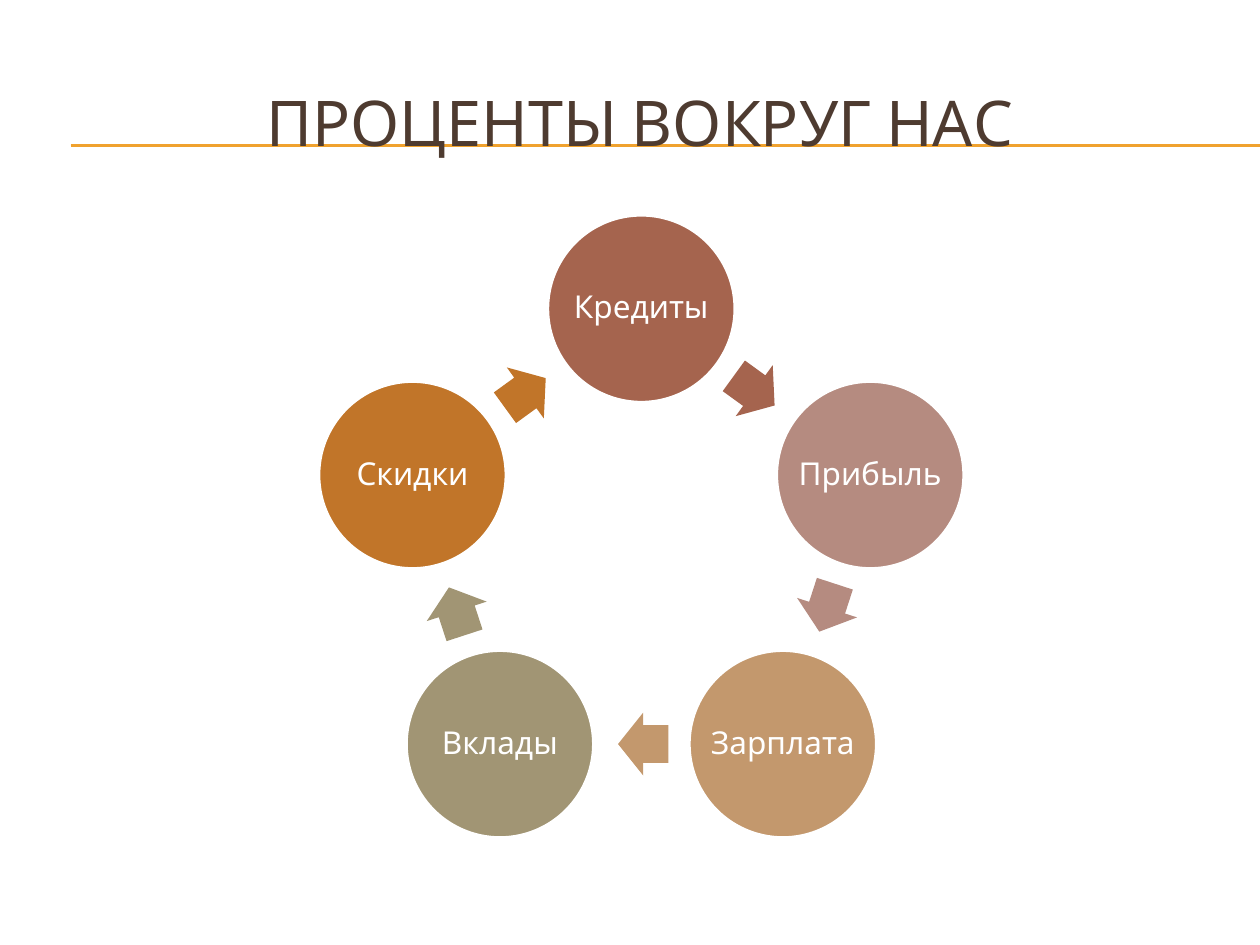
from math import cos, radians, sin
from typing import NamedTuple

from pptx import Presentation
from pptx.dml.color import RGBColor
from pptx.enum.shapes import MSO_CONNECTOR, MSO_SHAPE
from pptx.enum.text import MSO_ANCHOR, PP_ALIGN
from pptx.oxml.ns import qn
from pptx.util import Inches, Pt

FONT = "Karla"
CENTER_X, CENTER_Y, RADIUS = 5.09, 4.36, 1.91
DIAMETER = 1.49
ARROW_W, ARROW_H, ARROW_SHIFT = 0.4, 0.5, 0.015


class Stage(NamedTuple):
    label: str
    color: str


STAGES = [
    Stage("Кредиты", "A5644E"),
    Stage("Прибыль", "B58B80"),
    Stage("Зарплата", "C3986D"),
    Stage("Вклады", "A19574"),
    Stage("Скидки", "C17529"),
]
STEP = 360 / len(STAGES)


def rgb(color: str) -> RGBColor:
    return RGBColor.from_string(color)


def write(shape, text: str, size: float, color: str):
    tf = shape.text_frame
    tf.text = text
    tf.vertical_anchor = MSO_ANCHOR.MIDDLE
    p = tf.paragraphs[0]
    p.alignment = PP_ALIGN.CENTER
    font = p.runs[0].font
    font.name, font.size, font.color.rgb = FONT, Pt(size), rgb(color)
    return tf


def add_rule(s, y: float) -> None:
    line = s.shapes.add_connector(
        MSO_CONNECTOR.STRAIGHT, Inches(0.56), Inches(y), Inches(10), Inches(y))
    line.line.color.rgb = rgb("F0A22E")
    line.line.width = Pt(0.75)
    sp_pr = line._element.spPr
    sp_pr.append(sp_pr.makeelement(qn("a:effectLst"), {}))


def add_centered(s, kind, x: float, y: float, w: float, h: float, color: str):
    sp = s.shapes.add_shape(
        kind, Inches(x - w / 2), Inches(y - h / 2), Inches(w), Inches(h))
    sp.shadow.inherit = False
    sp.fill.solid()
    sp.fill.fore_color.rgb = rgb(color)
    return sp


def add_circle(s, stage: Stage, angle: float) -> None:
    x = CENTER_X + RADIUS * sin(radians(angle))
    y = CENTER_Y - RADIUS * cos(radians(angle))
    sp = add_centered(s, MSO_SHAPE.OVAL, x, y, DIAMETER, DIAMETER, stage.color)
    sp.line.color.rgb = rgb("FFFFFF")
    sp.line.width = Pt(2)
    tf = write(sp, stage.label, 18, "FFFFFF")
    tf.word_wrap = False
    tf.margin_left = tf.margin_right = Inches(0.03)
    tf.margin_top = tf.margin_bottom = Inches(0.03)
    tf.paragraphs[0].line_spacing = 0.9


def add_arrow(s, stage: Stage, angle: float) -> None:
    # Midway between neighbouring circles, pulled back slightly
    middle = radians(angle)
    reach = RADIUS * cos(radians(STEP / 2))
    x = CENTER_X + reach * sin(middle) - ARROW_SHIFT * cos(middle)
    y = CENTER_Y - reach * cos(middle) - ARROW_SHIFT * sin(middle)
    sp = add_centered(s, MSO_SHAPE.RIGHT_ARROW, x, y, ARROW_W, ARROW_H, stage.color)
    sp.line.fill.background()
    sp.adjustments[0], sp.adjustments[1] = 0.6, 0.5
    sp.rotation = angle


def main() -> None:
    prs = Presentation()
    prs.slide_width, prs.slide_height = Inches(10), Inches(7.5)
    s = prs.slides.add_slide(prs.slide_layouts[6])

    # Double rule behind the title
    for y in (1.15, 1.16):
        add_rule(s, y)

    # Title
    title = s.shapes.add_textbox(Inches(0.33), Inches(0.5), Inches(9.5), Inches(0.92))
    write(title, "ПРОЦЕНТЫ ВОКРУГ НАС", 36, "4E3B30").word_wrap = True

    # Cycle, clockwise from the top
    for i, stage in enumerate(STAGES):
        add_circle(s, stage, i * STEP)
        add_arrow(s, stage, (i + 0.5) * STEP)

    prs.save("out.pptx")


if __name__ == "__main__":
    main()
